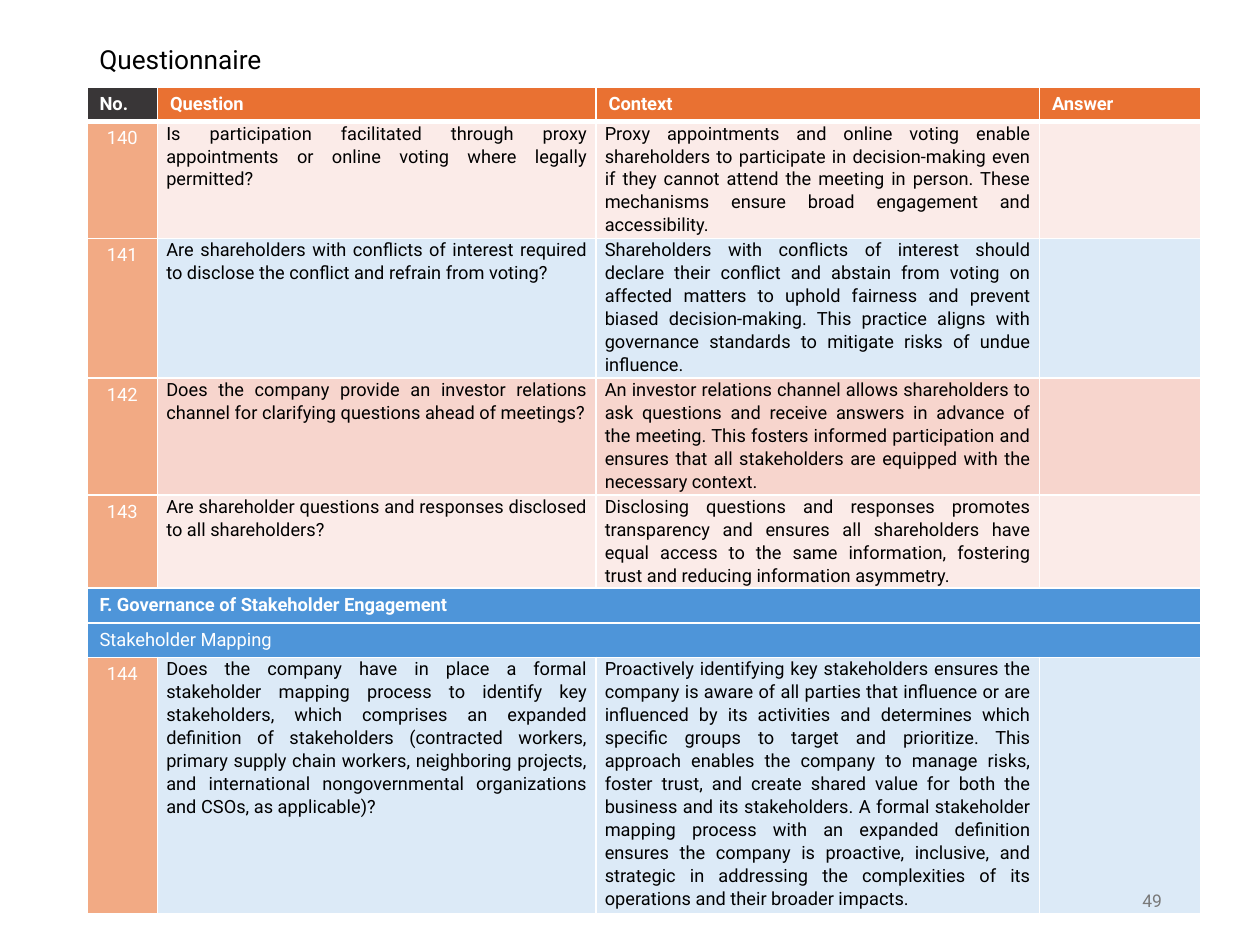
"""Build the questionnaire slide with its question, context and answer table."""
from dataclasses import dataclass

from lxml.etree import SubElement
from pptx import Presentation
from pptx.dml.color import RGBColor
from pptx.enum.text import MSO_ANCHOR as Anchor, PP_ALIGN as Align
from pptx.oxml.ns import qn
from pptx.slide import Slide
from pptx.table import Table, _Cell as Cell
from pptx.text.text import TextFrame
from pptx.util import Inches, Pt


@dataclass(frozen=True)
class Theme:
    font: str = "Roboto"
    white: str = "FFFFFF"
    black: str = "000000"
    grey: str = "797979"
    charcoal: str = "393637"
    orange: str = "E97132"
    peach: str = "F2AA84"
    blue: str = "4E95D9"
    pale_pink: str = "FBEBE8"
    pink: str = "F7D5CD"
    pale_blue: str = "DCEAF7"
    title_size: float = 15
    label_size: float = 10.5
    body_size: float = 10.4
    page_size: float = 10


@dataclass(frozen=True)
class Question:
    number: int
    question: str
    context: str
    fill: str


@dataclass(frozen=True)
class Section:
    title: str
    bold: bool


THEME = Theme()
HEADINGS = ("No.", "Question", "Context", "Answer")
COLUMN_WIDTHS = (0.56, 3.48, 3.52, 1.28)
ROW_HEIGHT = 0.22
ROWS = (
    Question(
        140,
        "Is participation facilitated through proxy appointments or online voting "
        "where legally permitted?",
        "Proxy appointments and online voting enable shareholders to participate in "
        "decision-making even if they cannot attend the meeting in person. These "
        "mechanisms ensure broad engagement and accessibility.",
        THEME.pale_pink,
    ),
    Question(
        141,
        "Are shareholders with conflicts of interest required to disclose the "
        "conflict and refrain from voting?",
        "Shareholders with conflicts of interest should declare their conflict and "
        "abstain from voting on affected matters to uphold fairness and prevent "
        "biased decision-making. This practice aligns with governance standards to "
        "mitigate risks of undue influence.",
        THEME.pale_blue,
    ),
    Question(
        142,
        "Does the company provide an investor relations channel for clarifying "
        "questions ahead of meetings?",
        "An investor relations channel allows shareholders to ask questions and "
        "receive answers in advance of the meeting. This fosters informed "
        "participation and ensures that all stakeholders are equipped with the "
        "necessary context.",
        THEME.pink,
    ),
    Question(
        143,
        "Are shareholder questions and responses disclosed to all shareholders?",
        "Disclosing questions and responses promotes transparency and ensures all "
        "shareholders have equal access to the same information, fostering trust "
        "and reducing information asymmetry.",
        THEME.pale_pink,
    ),
    Section("F. Governance of Stakeholder Engagement", True),
    Section("Stakeholder Mapping", False),
    Question(
        144,
        "Does the company have in place a formal stakeholder mapping process to "
        "identify key stakeholders, which comprises an expanded definition of "
        "stakeholders (contracted workers, primary supply chain workers, "
        "neighboring projects, and international nongovernmental organizations "
        "and CSOs, as applicable)?",
        "Proactively identifying key stakeholders ensures the company is aware of "
        "all parties that influence or are influenced by its activities and "
        "determines which specific groups to target and prioritize. This approach "
        "enables the company to manage risks, foster trust, and create shared value "
        "for both the business and its stakeholders. A formal stakeholder mapping "
        "process with an expanded definition ensures the company is proactive, "
        "inclusive, and strategic in addressing the complexities of its operations "
        "and their broader impacts.",
        THEME.pale_blue,
    ),
)


def write(frame: TextFrame, text: str, *, size: float = THEME.label_size,
          color: str = THEME.white, bold: bool = False,
          align: Align = Align.LEFT, spacing: float = 1.0) -> None:
    para = frame.paragraphs[0]
    para.alignment = align
    para.line_spacing = spacing
    span = para.add_run()
    span.text = text
    span.font.name = THEME.font
    span.font.size = Pt(size)
    span.font.bold = bold
    span.font.color.rgb = RGBColor.from_string(color)


def add_text_box(page: Slide, text: str, left: float, top: float, width: float,
                 height: float, **text_format) -> None:
    box = page.shapes.add_textbox(Inches(left), Inches(top), Inches(width), Inches(height))
    box.text_frame.word_wrap = True
    box.text_frame.vertical_anchor = Anchor.MIDDLE
    write(box.text_frame, text, **text_format)


def style_cell(cell: Cell, fill: str, top: float = 1, bottom: float = 1) -> None:
    properties = cell._tc.get_or_add_tcPr()
    for side, weight in (("L", 1), ("R", 1), ("T", top), ("B", bottom)):
        line = SubElement(properties, qn(f"a:ln{side}"), w=str(Pt(weight)))
        solid = SubElement(line, qn("a:solidFill"))
        SubElement(solid, qn("a:srgbClr"), val=THEME.white)
    cell.fill.solid()
    cell.fill.fore_color.rgb = RGBColor.from_string(fill)


def fill_header(table: Table) -> None:
    for column, heading in enumerate(HEADINGS):
        cell = table.cell(0, column)
        style_cell(cell, THEME.orange if column else THEME.charcoal, bottom=3)
        write(cell.text_frame, heading, bold=True)


def fill_question(table: Table, row: int, entry: Question) -> None:
    for column in range(len(HEADINGS)):
        style_cell(table.cell(row, column), entry.fill if column else THEME.peach,
                   top=3 if row == 1 else 1)
    write(table.cell(row, 0).text_frame, str(entry.number), align=Align.CENTER)
    for column, text in enumerate((entry.question, entry.context), start=1):
        cell = table.cell(row, column)
        cell.margin_left = cell.margin_right = Inches(0.07)
        cell.margin_top = cell.margin_bottom = Inches(0)
        write(cell.text_frame, text, size=THEME.body_size, color=THEME.black,
              align=Align.JUSTIFY, spacing=1.07)


def fill_section(table: Table, row: int, entry: Section) -> None:
    last = len(HEADINGS) - 1
    for column in range(last + 1):
        style_cell(table.cell(row, column), THEME.blue)
    table.cell(row, 0).merge(table.cell(row, last))
    write(table.cell(row, 0).text_frame, entry.title, bold=entry.bold)


def add_questionnaire(page: Slide) -> None:
    count = len(ROWS) + 1
    table = page.shapes.add_table(
        count, len(HEADINGS), Inches(0.69), Inches(0.69),
        Inches(sum(COLUMN_WIDTHS)), Inches(ROW_HEIGHT * count)).table
    table.horz_banding = False
    for column, width in zip(table.columns, COLUMN_WIDTHS):
        column.width = Inches(width)
    fill_header(table)
    for row, entry in enumerate(ROWS, start=1):
        fill = fill_section if isinstance(entry, Section) else fill_question
        fill(table, row, entry)


def main() -> None:
    deck = Presentation()
    deck.slide_width, deck.slide_height = Inches(10), Inches(7.5)
    page = deck.slides.add_slide(deck.slide_layouts[6])
    add_text_box(page, "Questionnaire", 0.69, 0.27, 8.62, 0.42,
                 size=THEME.title_size, color=THEME.black, spacing=0.9)
    add_questionnaire(page)
    add_text_box(page, "49", 6.58, 6.95, 2.74, 0.4,
                 size=THEME.page_size, color=THEME.grey, align=Align.RIGHT)
    deck.save("out.pptx")


if __name__ == "__main__":
    main()
